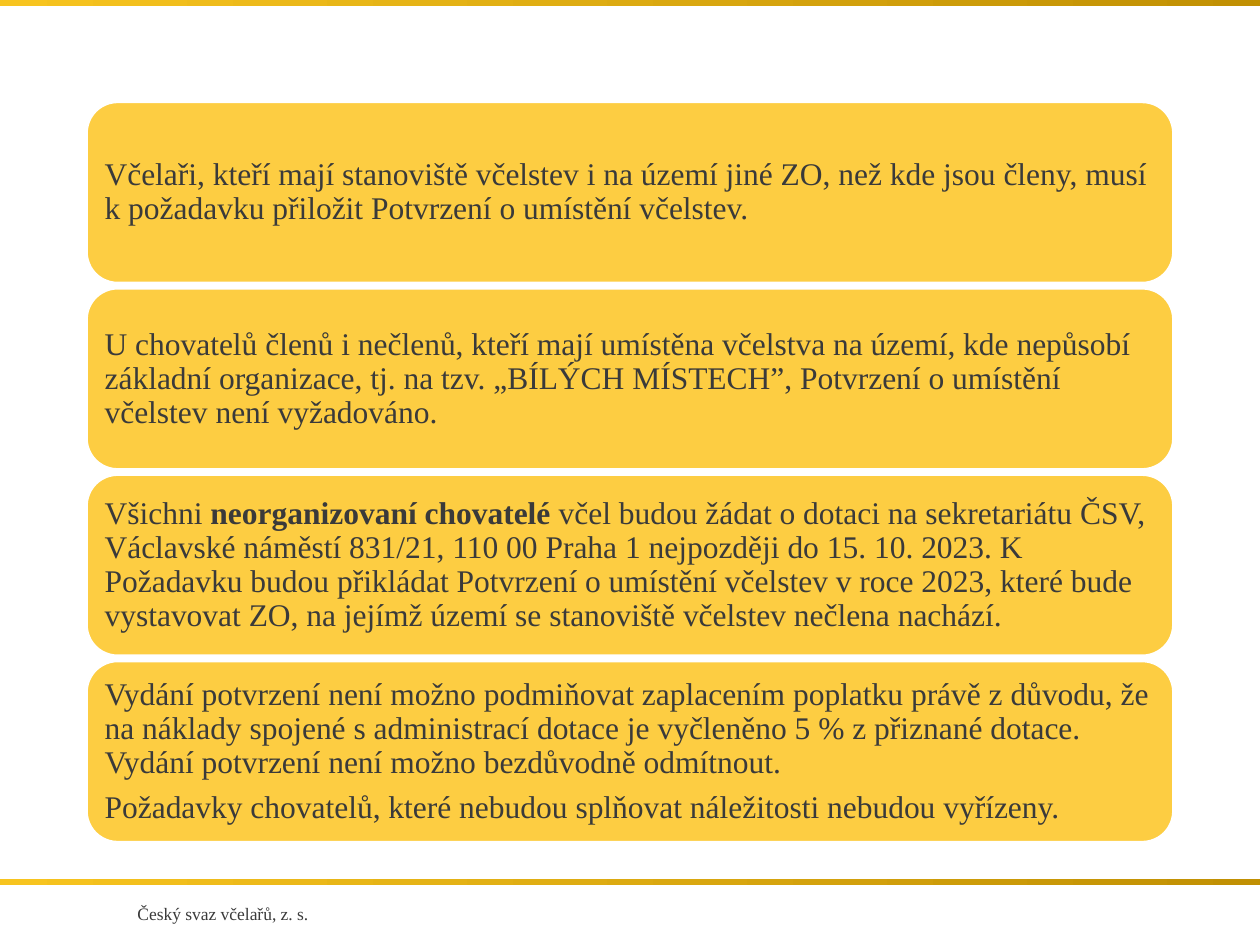
from dataclasses import dataclass

from pptx import Presentation
from pptx.dml.color import RGBColor
from pptx.enum.shapes import MSO_SHAPE
from pptx.enum.text import MSO_ANCHOR, PP_ALIGN
from pptx.util import Pt

RECTANGLE = MSO_SHAPE.RECTANGLE
ROUNDED = MSO_SHAPE.ROUNDED_RECTANGLE
MIDDLE, TOP = MSO_ANCHOR.MIDDLE, MSO_ANCHOR.TOP
LEFT, CENTER = PP_ALIGN.LEFT, PP_ALIGN.CENTER

COLORS = {
    "text": "3A3A3A",
    "card": "FDCD42",
    "outline": "FFFFFF",
    "bar_dark": "C19003",
    "bar_light": "F7C41F",
}
FONT = "Times New Roman"
SLIDE_W, SLIDE_H = 720, 540
BAR_H = 3.6
CARD_LEFT, CARD_TOP, CARD_W, CARD_H = 49.7, 58.5, 620.6, 103
CARD_PITCH = 106.5


@dataclass(frozen=True)
class Run:
    text: str
    bold: bool = False


@dataclass(frozen=True)
class Card:
    paragraphs: tuple[tuple[Run, ...], ...]


CARDS = (
    Card(((Run("Včelaři, kteří mají stanoviště včelstev i na území jiné ZO, než kde jsou "
               "členy, musí k požadavku přiložit Potvrzení o umístění včelstev."),),)),
    Card(((Run("U chovatelů členů i nečlenů, kteří mají umístěna včelstva na území, kde "
               "nepůsobí základní organizace, tj. na tzv. „BÍLÝCH MÍSTECH”, Potvrzení o "
               "umístění včelstev není vyžadováno."),),)),
    Card(((Run("Všichni "),
           Run("neorganizovaní chovatelé ", bold=True),
           Run("včel budou žádat o dotaci na sekretariátu ČSV, Václavské náměstí 831/21, "
               "110 00 Praha 1 nejpozději do 15. 10. 2023. K Požadavku budou přikládat "
               "Potvrzení o umístění včelstev v roce 2023, které bude vystavovat ZO, na "
               "jejímž území se stanoviště včelstev nečlena nachází.")),)),
    Card(((Run("Vydání potvrzení není možno podmiňovat zaplacením poplatku právě z důvodu, "
               "že na náklady spojené s administrací dotace je vyčleněno 5 % z přiznané "
               "dotace. Vydání potvrzení není možno bezdůvodně odmítnout."),),
          (Run("Požadavky chovatelů, které nebudou splňovat náležitosti nebudou "
               "vyřízeny."),))),
)


def color(name: str) -> RGBColor:
    return RGBColor.from_string(COLORS[name])


def write_text(frame, paragraphs, *, size: float, align=LEFT, anchor=TOP,
               inset_x: float, inset_y: float, line_spacing: float = 1,
               gap: float = 0) -> None:
    """Fill a text frame; gap is the space between paragraphs."""
    frame.word_wrap = True
    frame.vertical_anchor = anchor
    frame.margin_left = frame.margin_right = Pt(inset_x)
    frame.margin_top = frame.margin_bottom = Pt(inset_y)
    for index, runs in enumerate(paragraphs):
        paragraph = frame.add_paragraph() if index else frame.paragraphs[0]
        paragraph.alignment = align
        paragraph.line_spacing = line_spacing
        if index:
            paragraph.space_before = Pt(gap)
        for part in runs:
            run = paragraph.add_run()
            run.text = part.text
            run.font.name = FONT
            run.font.size = Pt(size)
            run.font.bold = part.bold
            run.font.color.rgb = color("text")


def draw_bar(slide, top: float) -> None:
    bar = slide.shapes.add_shape(RECTANGLE, 0, Pt(top), Pt(SLIDE_W), Pt(BAR_H))
    bar.shadow.inherit = False
    bar.line.fill.background()
    bar.fill.gradient()
    bar.fill.gradient_angle = 180
    for stop, position, name in zip(bar.fill.gradient_stops, (0, 1),
                                    ("bar_dark", "bar_light")):
        stop.position = position
        stop.color.rgb = color(name)


def draw_card(slide, card: Card, top: float) -> None:
    box = slide.shapes.add_shape(ROUNDED, Pt(CARD_LEFT), Pt(top), Pt(CARD_W), Pt(CARD_H))
    box.adjustments[0] = 0.17
    box.shadow.inherit = False
    box.fill.solid()
    box.fill.fore_color.rgb = color("card")
    box.line.color.rgb = color("outline")
    box.line.width = Pt(1)
    write_text(box.text_frame, card.paragraphs, size=18, anchor=MIDDLE,
               inset_x=5, inset_y=5, line_spacing=0.9, gap=6.3)


def main() -> None:
    presentation = Presentation()
    presentation.slide_width, presentation.slide_height = Pt(SLIDE_W), Pt(SLIDE_H)
    slide = presentation.slides.add_slide(presentation.slide_layouts[6])

    # Gold bars and footer
    for bar_top in (0, 502.4):
        draw_bar(slide, bar_top)
    footer = slide.shapes.add_textbox(Pt(38.9), Pt(512.6), Pt(177), Pt(19.4))
    write_text(footer.text_frame, ((Run("Český svaz včelařů, z. s."),),), size=10,
               align=CENTER, inset_x=7.2, inset_y=3.6)

    # Stacked cards
    for index, card in enumerate(CARDS):
        draw_card(slide, card, CARD_TOP + index * CARD_PITCH)

    presentation.save("out.pptx")


if __name__ == "__main__":
    main()
